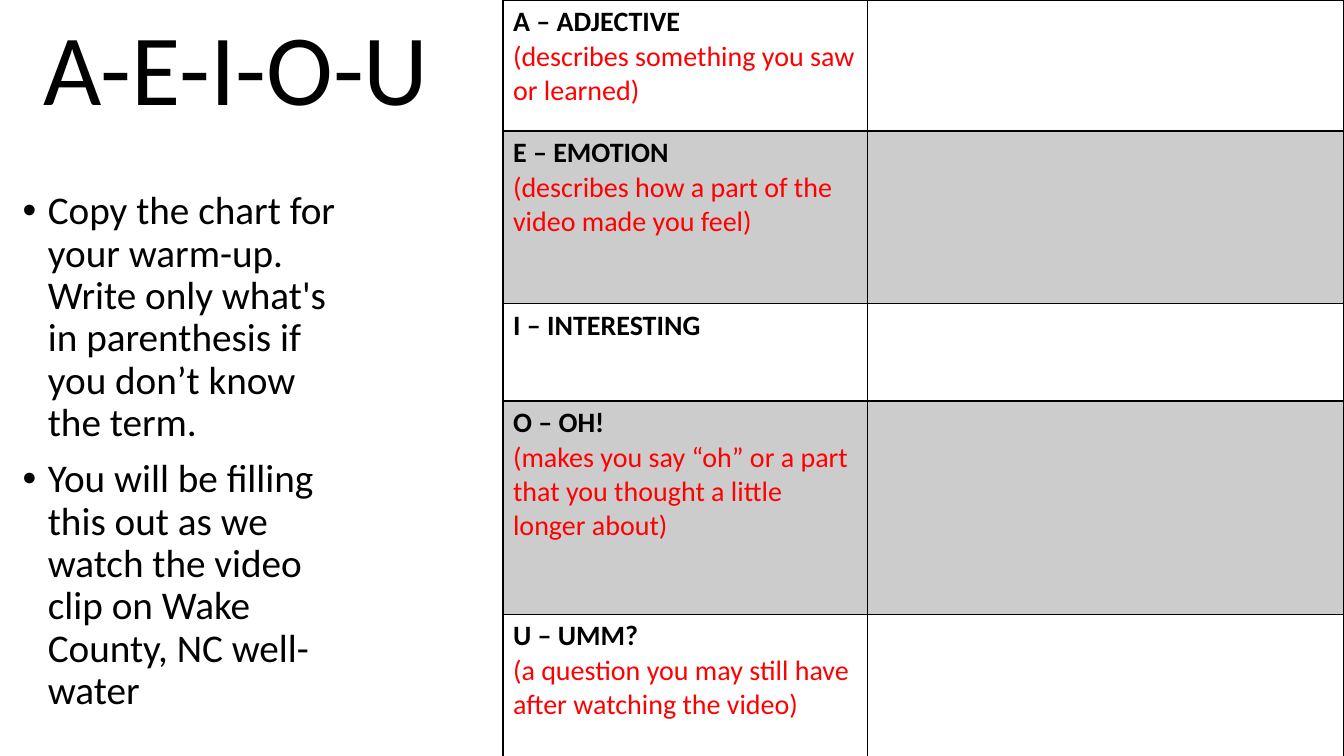
import dataclasses

import lxml.etree
import pptx
import pptx.dml.color
import pptx.enum.text
import pptx.oxml.ns
import pptx.util

PX = 9525  # 96 px to the inch


@dataclasses.dataclass(frozen=True)
class Theme:
    font: str = "Calibri"
    black: str = "000000"
    red: str = "FF0000"
    title_size: int = 72
    body_size: int = 28
    cell_size: int = 20
    line_spacing: float = 0.9
    band_alpha: int = 20
    thin: int = 1
    thick: int = 2


THEME = Theme()
TITLE = "A-E-I-O-U "
DIRECTIONS = [
    "Copy the chart for your warm-up. Write only what's in parenthesis if you don’t know the term.",
    "You will be filling this out as we watch the video clip on Wake County, NC well-water",
]
PROMPTS = [
    (125, "A – ADJECTIVE", "(describes something you saw or learned)"),
    (164, "E – EMOTION", "(describes how a part of the video made you feel)"),
    (93, "I – INTERESTING", ""),
    (203, "O – OH!", "(makes you say “oh” or a part that you thought a little longer about)"),
    (164, "U – UMM?", "(a question you may still have after watching the video)"),
]
PROMPT_WIDTH = 347


def px(length):
    return pptx.util.Emu(length * PX)


def place(shape, box):
    shape.left, shape.top, shape.width, shape.height = map(px, box)


def format_runs(para, size, color, bold=False):
    for span in para.runs:
        span.font.name = THEME.font
        span.font.size = pptx.util.Pt(size)
        span.font.bold = bold
        span.font.color.rgb = pptx.dml.color.RGBColor.from_string(color)


def fill_placeholder(shape, box, lines, size, anchor):
    """Move a placeholder to its box and set its paragraphs; return them."""
    place(shape, box)
    frame = shape.text_frame
    frame.text = "\n".join(lines)
    frame.word_wrap = True
    frame.auto_size = pptx.enum.text.MSO_AUTO_SIZE.NONE
    frame.vertical_anchor = anchor
    for para in frame.paragraphs:
        para.line_spacing = THEME.line_spacing
        format_runs(para, size, THEME.black)
    return frame.paragraphs


def add_title(page, box):
    anchor = pptx.enum.text.MSO_ANCHOR.MIDDLE
    for para in fill_placeholder(page.shapes.title, box, [TITLE], THEME.title_size, anchor):
        para.alignment = pptx.enum.text.PP_ALIGN.CENTER


def add_directions(page, box):
    anchor = pptx.enum.text.MSO_ANCHOR.TOP
    body = page.placeholders[1]
    for para in fill_placeholder(body, box, DIRECTIONS, THEME.body_size, anchor):
        para.space_before = pptx.util.Pt(10)
        properties = para._p.get_or_add_pPr()
        properties.set("marL", str(px(24)))
        properties.set("indent", str(px(-24)))
        bullet = lxml.etree.SubElement(properties, pptx.oxml.ns.qn("a:buChar"))
        bullet.set("char", "•")


def set_borders(cell, widths):
    """Draw the left, right, top and bottom borders, widths in points."""
    properties = cell._tc.get_or_add_tcPr()
    for index, (side, width) in enumerate(zip("LRTB", widths)):
        line = lxml.etree.Element(pptx.oxml.ns.qn(f"a:ln{side}"), w=str(pptx.util.Pt(width)))
        fill = lxml.etree.SubElement(line, pptx.oxml.ns.qn("a:solidFill"))
        lxml.etree.SubElement(fill, pptx.oxml.ns.qn("a:srgbClr"), val=THEME.black)
        properties.insert(index, line)


def set_band(cell, shaded):
    if not shaded:
        cell.fill.background()
        return
    cell.fill.solid()
    cell.fill.fore_color.rgb = pptx.dml.color.RGBColor.from_string(THEME.black)
    color = cell._tc.tcPr.find(".//" + pptx.oxml.ns.qn("a:srgbClr"))
    lxml.etree.SubElement(color, pptx.oxml.ns.qn("a:alpha"), val=str(THEME.band_alpha * 1000))


def write_prompt(cell, heading, hint):
    frame = cell.text_frame
    frame.text = heading
    format_runs(frame.paragraphs[0], THEME.cell_size, THEME.black, bold=True)
    if hint:
        para = frame.add_paragraph()
        para.text = hint
        format_runs(para, THEME.cell_size, THEME.red)


def add_chart_table(page, box):
    table = page.shapes.add_table(len(PROMPTS), 2, *map(px, box)).table
    table.first_row = table.horz_banding = False
    table.columns[0].width = px(PROMPT_WIDTH)
    table.columns[1].width = px(box[2] - PROMPT_WIDTH)
    for index, (height, heading, hint) in enumerate(PROMPTS):
        row = table.rows[index]
        row.height = px(height)
        top = THEME.thick if index == 1 else THEME.thin
        bottom = THEME.thick if index == 0 else THEME.thin
        for cell in row.cells:
            set_band(cell, index % 2 == 1)
            set_borders(cell, (THEME.thin, THEME.thin, top, bottom))
        write_prompt(row.cells[0], heading, hint)


def main():
    deck = pptx.Presentation()
    deck.slide_width, deck.slide_height = px(1280), px(720)
    page = deck.slides.add_slide(deck.slide_layouts[1])
    add_title(page, (12, 0, 447, 139))
    add_directions(page, (12, 177, 321, 507))
    add_chart_table(page, (479, 0, 801, sum(prompt[0] for prompt in PROMPTS)))
    deck.save("out.pptx")


if __name__ == "__main__":
    main()
